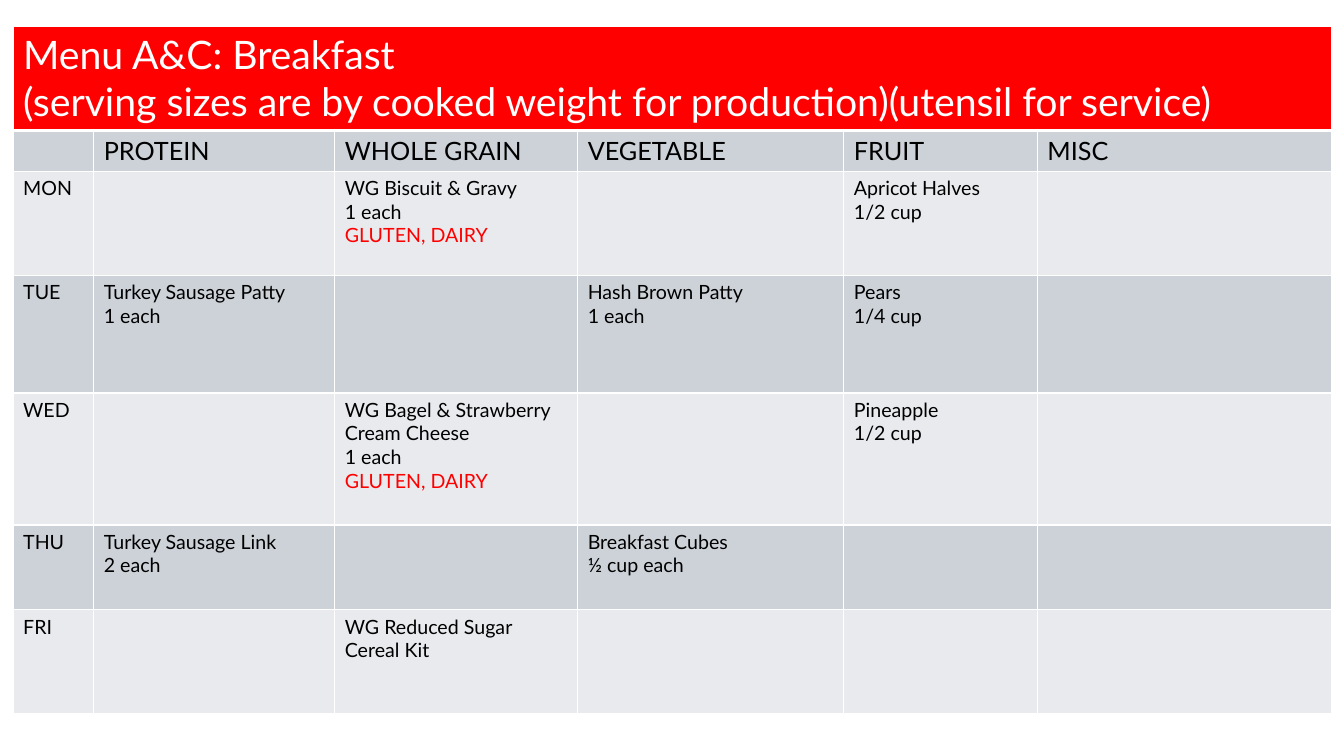
from lxml.etree import SubElement
from pptx import Presentation
from pptx.dml.color import RGBColor
from pptx.oxml.ns import qn
from pptx.util import Inches, Pt

FONT = "Lato"
WHITE = RGBColor(0xFF, 0xFF, 0xFF)
BLACK = RGBColor(0, 0, 0)
RED = RGBColor(0xFF, 0, 0)
BANDS = (RGBColor(0xE8, 0xEA, 0xED), RGBColor(0xCC, 0xD2, 0xD8))

TITLE = [
    "Menu A&C: Breakfast",
    "(serving sizes are by cooked weight for production)(utensil for service)",
]
HEADINGS = ["", "PROTEIN", "WHOLE GRAIN", "VEGETABLE", "FRUIT", "MISC"]
ALLERGENS = "GLUTEN, DAIRY"
# Each day maps a heading to the lines of its cell.
MENU = {
    "MON": {
        "WHOLE GRAIN": ["WG Biscuit & Gravy", "1 each", ALLERGENS],
        "FRUIT": ["Apricot Halves", "1/2 cup"],
    },
    "TUE": {
        "PROTEIN": ["Turkey Sausage Patty", "1 each"],
        "VEGETABLE": ["Hash Brown Patty", "1 each"],
        "FRUIT": ["Pears", "1/4 cup"],
    },
    "WED": {
        "WHOLE GRAIN": ["WG Bagel & Strawberry Cream Cheese", "1 each", ALLERGENS],
        "FRUIT": ["Pineapple", "1/2 cup"],
    },
    "THU": {
        "PROTEIN": ["Turkey Sausage Link", "2 each"],
        "VEGETABLE": ["Breakfast Cubes", "½ cup each"],
    },
    "FRI": {"WHOLE GRAIN": ["WG Reduced Sugar Cereal Kit"]},
}

LEFT, TOP = 0.13, 0.26
COLUMN_WIDTHS = [0.8, 2.39, 2.41, 2.64, 1.92, 2.92]
ROW_HEIGHTS = [1.03, 0.4, 1.03, 1.17, 1.31, 0.84, 1.03]


def set_borders(cell, bottom=1):
    """Draw white borders, 1 pt except for the bottom one."""
    properties = cell._tc.get_or_add_tcPr()
    for side, width in {"L": 1, "R": 1, "T": 1, "B": bottom}.items():
        line = SubElement(properties, qn(f"a:ln{side}"), w=str(Pt(width)))
        fill = SubElement(line, qn("a:solidFill"))
        SubElement(fill, qn("a:srgbClr"), val=str(WHITE))


def fill_cell(cell, lines, *, size, fill, color=BLACK, bottom=1):
    set_borders(cell, bottom)
    cell.fill.solid()
    cell.fill.fore_color.rgb = fill
    if not any(lines):
        return
    cell.text = "\n".join(lines)
    for para in cell.text_frame.paragraphs:
        for span in para.runs:
            span.font.name = FONT
            span.font.size = Pt(size)
            span.font.color.rgb = RED if span.text == ALLERGENS else color


def add_menu(page):
    frame = page.shapes.add_table(
        len(ROW_HEIGHTS), len(COLUMN_WIDTHS), Inches(LEFT), Inches(TOP),
        Inches(sum(COLUMN_WIDTHS)), Inches(sum(ROW_HEIGHTS)))
    table = frame.table
    table.first_row = False
    for column, width in zip(table.columns, COLUMN_WIDTHS):
        column.width = Inches(width)
    for row, height in zip(table.rows, ROW_HEIGHTS):
        row.height = Inches(height)

    table.cell(0, 0).merge(table.cell(0, len(HEADINGS) - 1))
    fill_cell(table.cell(0, 0), TITLE, size=28, fill=RED, color=WHITE, bottom=3)
    for column, heading in enumerate(HEADINGS):
        fill_cell(table.cell(1, column), [heading], size=18, fill=BANDS[1])
    for row, (day, dishes) in enumerate(MENU.items(), start=2):
        for column, heading in enumerate(HEADINGS):
            lines = dishes.get(heading, []) if heading else [day]
            fill_cell(table.cell(row, column), lines, size=14, fill=BANDS[row % 2])


def main():
    deck = Presentation()
    deck.slide_width, deck.slide_height = Inches(13.33), Inches(7.5)
    blank_layout = deck.slide_layouts[6]
    add_menu(deck.slides.add_slide(blank_layout))
    deck.save("out.pptx")


if __name__ == "__main__":
    main()
